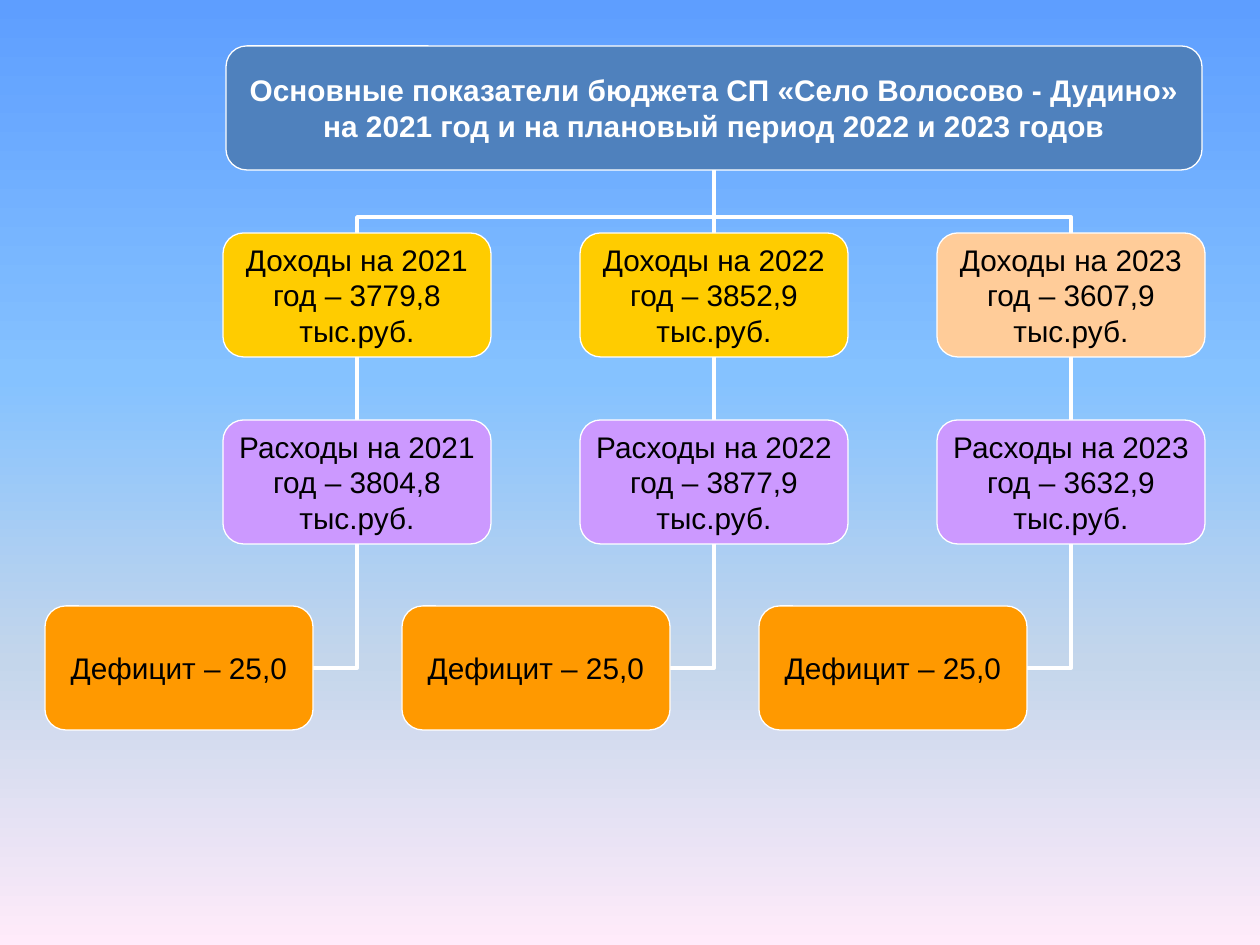
"""Build a budget hierarchy slide: yearly income, spending and deficit under one title."""
import pptx
import pptx.dml.color
import pptx.enum.shapes
import pptx.enum.text
import pptx.oxml
import pptx.oxml.ns
import pptx.util
import lxml.etree

THEME = {
    "font": "Arial",
    "size": 17,
    "title": "4F81BD",
    "income": ["FFCC00", "FFCC00", "FFCC99"],
    "spending": "CC99FF",
    "deficit": "FF9900",
    "light": "FFFFFF",
    "dark": "000000",
    "sky": [(0, "5E9EFF"), (40, "85C2FF"), (70, "C4D6EB"), (100, "FFEBFA")],
}
EMU_PER_PX = 914400 / 126

presentation = pptx.Presentation()
presentation.slide_width = round(1260 * EMU_PER_PX)
presentation.slide_height = round(945 * EMU_PER_PX)
slide = presentation.slides.add_slide(presentation.slide_layouts[6])


def add_box(text, left, top, width, height, fill, color=THEME["dark"], bold=False):
    bounds = [round(value * EMU_PER_PX) for value in (left, top, width, height)]
    shape = slide.shapes.add_shape(pptx.enum.shapes.MSO_SHAPE.ROUNDED_RECTANGLE, *bounds)
    shape.shadow.inherit = False
    shape.fill.solid()
    shape.fill.fore_color.rgb = pptx.dml.color.RGBColor.from_string(fill)
    shape.line.color.rgb = pptx.dml.color.RGBColor.from_string(THEME["light"])
    shape.line.width = pptx.util.Pt(0.75)
    frame = shape.text_frame
    frame.word_wrap = True
    frame.vertical_anchor = pptx.enum.text.MSO_ANCHOR.MIDDLE
    frame.margin_left = frame.margin_right = frame.margin_top = frame.margin_bottom = 0
    paragraph = frame.paragraphs[0]
    paragraph.alignment = pptx.enum.text.PP_ALIGN.CENTER
    run = paragraph.add_run()
    run.text = text
    run.font.name = THEME["font"]
    run.font.size = pptx.util.Pt(THEME["size"])
    run.font.bold = bold
    run.font.color.rgb = pptx.dml.color.RGBColor.from_string(color)


def add_link(kind, begin_x, begin_y, end_x, end_y):
    points = [round(value * EMU_PER_PX) for value in (begin_x, begin_y, end_x, end_y)]
    connector = slide.shapes.add_connector(kind, *points)
    connector.line.color.rgb = pptx.dml.color.RGBColor.from_string(THEME["light"])
    connector.line.width = pptx.util.Pt(2.25)
    properties = connector._element.spPr
    lxml.etree.SubElement(properties, pptx.oxml.ns.qn("a:effectLst"))
    return properties


background = slide.background.fill
background.gradient()
background.gradient_angle = 270
stop_list = slide.background._cSld.find(".//" + pptx.oxml.ns.qn("a:gsLst"))
for stop in list(stop_list):
    stop_list.remove(stop)
for position, color in THEME["sky"]:
    stop = lxml.etree.SubElement(stop_list, pptx.oxml.ns.qn("a:gs"), pos=str(position * 1000))
    lxml.etree.SubElement(stop, pptx.oxml.ns.qn("a:srgbClr"), val=color)

years = [
    ("2021", "3779,8", "3804,8"),
    ("2022", "3852,9", "3877,9"),
    ("2023", "3607,9", "3632,9"),
]
box_width, box_height = 268, 124
column_left, column_step, deficit_shift = 223, 357, 178
title_left, title_top, title_width = 226, 46, 976
income_top, spending_top, deficit_top = 233, 420, 606
title_center = title_left + title_width // 2
title_bottom = title_top + box_height
straight = pptx.enum.shapes.MSO_CONNECTOR.STRAIGHT
elbow = pptx.enum.shapes.MSO_CONNECTOR.ELBOW

for index in range(len(years)):
    left = column_left + index * column_step
    center = left + box_width // 2
    corner = add_link(elbow, left - deficit_shift + box_width, deficit_top + box_height // 2,
                      center, spending_top + box_height)
    corner.prstGeom.set("prst", "bentConnector2")
    add_link(straight, center, spending_top, center, income_top + box_height)

    middle_x, middle_y = (center + title_center) / 2, (income_top + title_bottom) / 2
    half_rise, half_run = (income_top - title_bottom) / 2, (title_center - center) / 2
    branch = add_link(elbow, middle_x - half_rise, middle_y - half_run,
                      middle_x + half_rise, middle_y + half_run)
    branch.find(pptx.oxml.ns.qn("a:xfrm")).set("rot", "16200000")
    adjustments = branch.prstGeom.get_or_add_avLst()
    lxml.etree.SubElement(adjustments, pptx.oxml.ns.qn("a:gd"), name="adj1", fmla="val 25400")

add_box("Основные показатели бюджета СП «Село Волосово - Дудино» "
        "на 2021 год и на плановый период 2022 и 2023 годов",
        title_left, title_top, title_width, box_height, THEME["title"],
        color=THEME["light"], bold=True)

for index, (year, income, spending) in enumerate(years):
    left = column_left + index * column_step
    add_box(f"Доходы на {year} год – {income} тыс.руб.",
            left, income_top, box_width, box_height, THEME["income"][index])
    add_box(f"Расходы на {year} год – {spending} тыс.руб.",
            left, spending_top, box_width, box_height, THEME["spending"])
    add_box("Дефицит – 25,0",
            left - deficit_shift, deficit_top, box_width, box_height, THEME["deficit"])

presentation.save("out.pptx")
